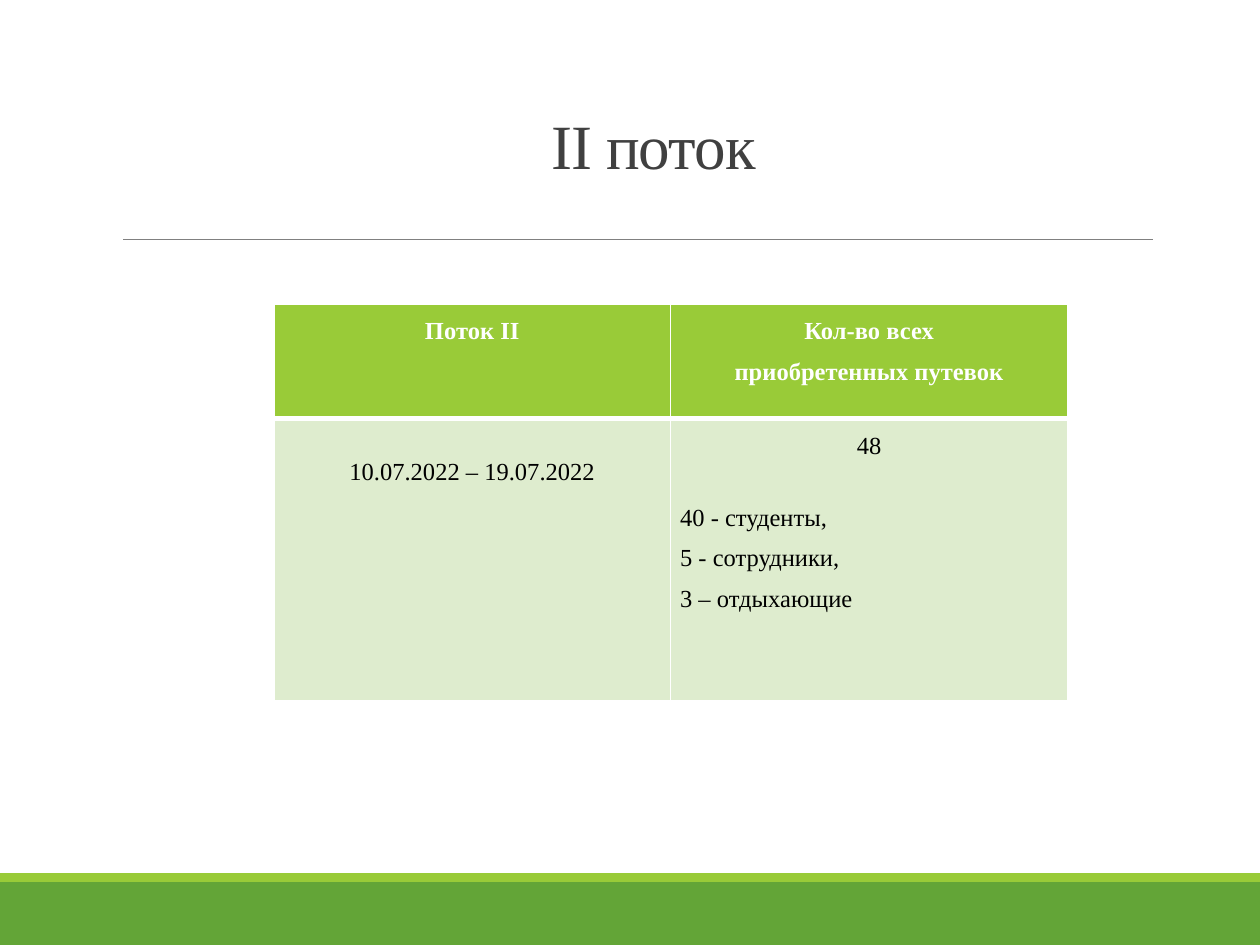
import pptx
import pptx.dml.color
import pptx.enum.shapes
import pptx.enum.text
import pptx.oxml
import pptx.oxml.ns
import pptx.util

Cm = pptx.util.Cm
Pt = pptx.util.Pt
RGBColor = pptx.dml.color.RGBColor
Align = pptx.enum.text.PP_ALIGN

WHITE = RGBColor(0xFF, 0xFF, 0xFF)
BLACK = RGBColor(0, 0, 0)
CHARCOAL = RGBColor(0x40, 0x40, 0x40)
GRAY = RGBColor(0x80, 0x80, 0x80)
GREEN = RGBColor(0x63, 0xA5, 0x37)
LIME = RGBColor(0x99, 0xCB, 0x38)
PALE_GREEN = RGBColor(0xDE, 0xEC, 0xCE)


class SlideBuilder:
    font_name = "Times New Roman"

    def __init__(self, page):
        self.page = page

    def style(self, para, size, color, bold=False, align=Align.CENTER, spacing=1.5):
        para.alignment = align
        para.line_spacing = spacing
        para.font.name = self.font_name
        para.font.size = Pt(size)
        para.font.bold = bold
        para.font.color.rgb = color

    def band(self, top, height, color):
        """Draw a bar across the whole slide."""
        box = self.page.shapes.add_shape(
            pptx.enum.shapes.MSO_SHAPE.RECTANGLE, 0, Cm(top), Cm(25.4), Cm(height))
        box.shadow.inherit = False
        box.fill.solid()
        box.fill.fore_color.rgb = color
        box.line.fill.background()

    def rule(self, left, right, y):
        line = self.page.shapes.add_connector(
            pptx.enum.shapes.MSO_CONNECTOR.STRAIGHT, Cm(left), Cm(y), Cm(right), Cm(y))
        line.line.color.rgb = GRAY
        line.line.width = Pt(0.5)
        properties = line._element.spPr
        properties.append(properties.makeelement(pptx.oxml.ns.qn("a:effectLst"), {}))

    def title(self, text, left, top, width, height):
        box = self.page.shapes.title
        box.left, box.top, box.width, box.height = map(Cm, (left, top, width, height))
        frame = box.text_frame
        frame.text = text
        frame.auto_size = pptx.enum.text.MSO_AUTO_SIZE.NONE
        frame.vertical_anchor = pptx.enum.text.MSO_ANCHOR.BOTTOM
        frame.margin_bottom = Cm(1.6)
        para = frame.paragraphs[0]
        self.style(para, 36, CHARCOAL, spacing=0.85)
        para.runs[0].font._element.set("spc", "-50")

    def table(self, left, top, widths, heights):
        table = self.page.shapes.add_table(
            len(heights), len(widths), Cm(left), Cm(top),
            Cm(sum(widths)), Cm(sum(heights))).table
        for column, width in zip(table.columns, widths):
            column.width = Cm(width)
        for row, height in zip(table.rows, heights):
            row.height = Cm(height)
        return table

    def cell(self, cell, lines, fill, color, bold, borders):
        """Fill a cell; borders holds left, right, top and bottom widths in points."""
        cell.margin_left = cell.margin_right = Cm(0.19)
        cell.margin_top = cell.margin_bottom = 0
        cell.text = "\n".join(lines)
        for para in cell.text_frame.paragraphs:
            self.style(para, 14, color, bold)
        cell.fill.solid()
        cell.fill.fore_color.rgb = fill
        properties = cell._tc.get_or_add_tcPr()
        for index, (side, width) in enumerate(zip("LRTB", borders)):
            properties.insert(index, pptx.oxml.parse_xml(
                f'<a:ln{side} {pptx.oxml.ns.nsdecls("a")} w="{Pt(width)}">'
                f'<a:solidFill><a:srgbClr val="{WHITE}"/></a:solidFill></a:ln{side}>'))


def main():
    deck = pptx.Presentation()
    deck.slide_width, deck.slide_height = Cm(25.4), Cm(19.05)
    page = deck.slides.add_slide(deck.slide_layouts[5])
    builder = SlideBuilder(page)

    builder.band(17.78, 1.27, GREEN)
    builder.band(17.6, 0.18, LIME)
    builder.rule(2.48, 23.24, 4.82)
    builder.title("II поток", 2.7, -0.28, 20.95, 5.56)

    table = builder.table(5.52, 6.13, (8, 8), (2.31, 5.69))
    headers = (["Поток II"], ["Кол-во всех", "приобретенных путевок"])
    details = (["10.07.2022 – 19.07.2022"],
               ["48", "40 - студенты,", "5 - сотрудники,", "3 – отдыхающие"])
    for column, (header, detail) in enumerate(zip(headers, details)):
        builder.cell(table.cell(0, column), header, LIME, WHITE, True, (1, 1, 1, 3))
        builder.cell(table.cell(1, column), detail, PALE_GREEN, BLACK, False, (1, 1, 3, 1))

    table.cell(1, 0).margin_top = Cm(0.54)
    guests = table.cell(1, 1).text_frame.paragraphs[1:]
    for para in guests:
        para.alignment = Align.LEFT
    guests[0].space_before = Pt(18)

    deck.save("out.pptx")


if __name__ == "__main__":
    main()
